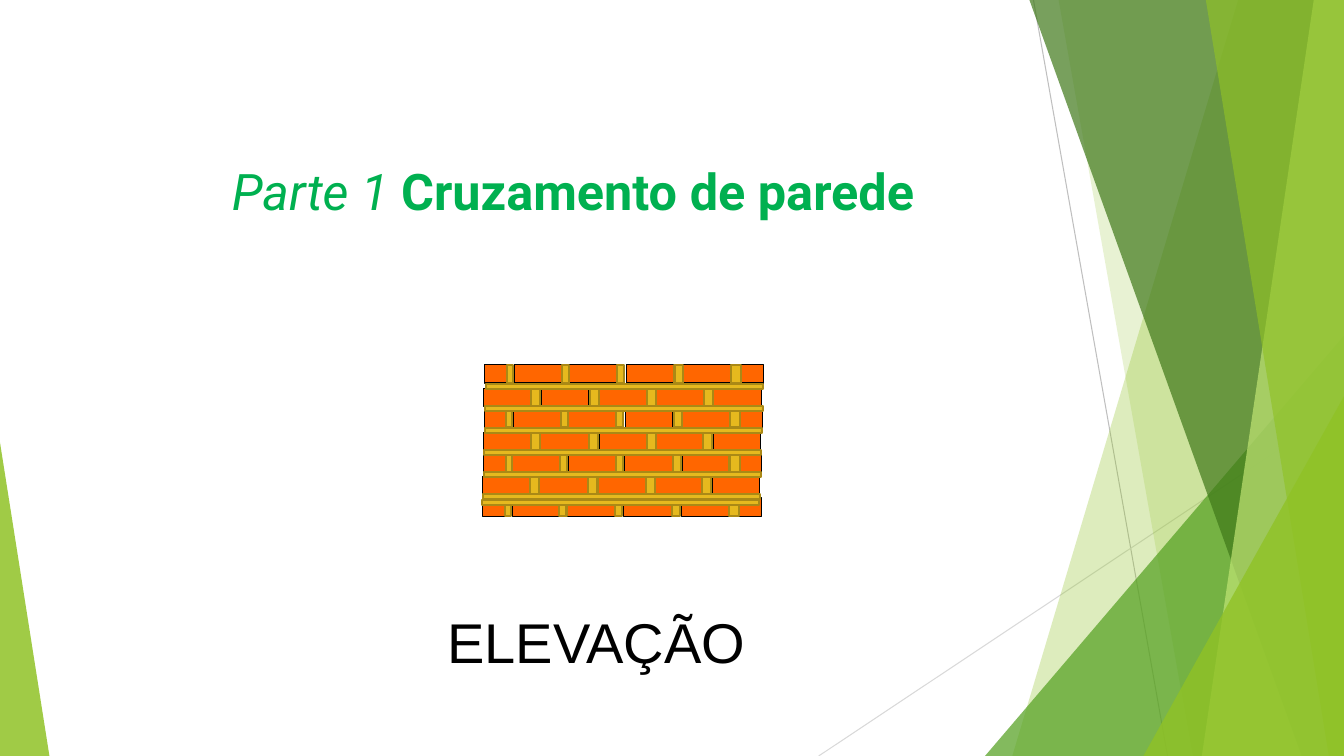
"""Build the wall crossing slide: a brick elevation beside green facets."""
from dataclasses import dataclass
from typing import Optional

from lxml import etree
from pptx import Presentation
from pptx import util as u
from pptx.dml.color import RGBColor
from pptx.enum import shapes, text
from pptx.oxml.ns import qn

HUES = {"brick": "FF6600", "edge": "000000", "joint": "E6B91E", "rim": "AA8916",
        "lime": "90C226", "leaf": "54A021", "moss": "3F7819", "pale": "C0E474",
        "title": "00B050", "ink": "000000", "grey": "BFBFBF", "mist": "D9D9D9"}
WIDE, HIGH = 13.33, 7.5


@dataclass
class Ray:
    """A thin line across the slide."""
    start: tuple[float, float]
    end: tuple[float, float]
    hue: str


@dataclass
class Facet:
    """A full-height band from a slanted left edge to the right side."""
    top: float
    foot: float
    hue: str
    alpha: int


@dataclass
class Wedge:
    """A right triangle standing on the bottom edge."""
    left: float
    top: float
    width: float
    tip: int
    hue: str
    alpha: int


@dataclass
class Block:
    """One brick or joint in a course."""
    left: float
    width: float
    hue: str = "brick"


@dataclass
class Part:
    """One run of text."""
    words: str
    size: int
    font: str
    hue: str
    bold: bool = False
    slant: bool = False


RAYS = [Ray((10.25, 0), (11.58, HIGH), "grey"), Ray((WIDE, 4.03), (8.12, HIGH), "mist")]
PANES = [Facet(12.28, 10.04, "lime", 30), Facet(10.5, 11.83, "lime", 20),
         Wedge(9.77, 3.33, 3.56, 1, "leaf", 72), Facet(10.21, 12.91, "moss", 70),
         Facet(13.03, 11.92, "pale", 70), Facet(11.96, 13.18, "lime", 65),
         Wedge(11.34, 3.93, 1.99, 1, "lime", 80), Wedge(0, 4.39, 0.49, 0, "lime", 85)]

SPAN, THICK, PITCH, DRIFT = 0.47, 0.18, 0.44, 0.007
SPLIT = ([Block(4.81, 0.22)] + [Block(x, SPAN) for x in (5.1, 5.65, 6.21, 6.78)]
         + [Block(7.35, 0.22)]
         + [Block(x, w, "joint") for x, w in ((7.25, 0.1), (6.69, 0.08), (6.12, 0.07),
                                              (5.57, 0.07), (5.03, 0.06))])
WHOLE = ([Block(x, SPAN) for x in (4.8, 5.37, 5.95, 6.51, 7.08)]
         + [Block(x, 0.09, "joint") for x in (5.27, 5.85, 6.42, 6.98)])
BEDS = [(4.82 - 0.006 * i, 3.81 + 0.218 * i) for i in range(6)] + [(4.78, 4.96)]


def tint(hue: str) -> RGBColor:
    """Return the named colour."""
    return RGBColor.from_string(HUES[hue])


def fill(shape, hue: str, rim: Optional[str] = None, weight: float = 0.75,
         alpha: int = 100) -> None:
    """Set fill, outline and transparency."""
    shape.shadow.inherit = False
    shape.fill.solid()
    shape.fill.fore_color.rgb = tint(hue)
    if alpha < 100:
        tone = shape._element.spPr.find(".//" + qn("a:srgbClr"))
        etree.SubElement(tone, qn("a:alpha"), val=str(alpha * 1000))
    if rim:
        shape.line.color.rgb = tint(rim)
        shape.line.width = u.Pt(weight)
    else:
        shape.line.fill.background()


def add_ray(slide, ray: Ray) -> None:
    """Draw a thin line."""
    ends = [u.Inches(v) for v in ray.start + ray.end]
    line = slide.shapes.add_connector(shapes.MSO_CONNECTOR.STRAIGHT, *ends)
    line.line.color.rgb = tint(ray.hue)
    line.line.width = u.Pt(0.75)
    etree.SubElement(line._element.spPr, qn("a:effectLst"))


def add_facet(slide, band: Facet) -> None:
    """Draw a slanted band."""
    spots = [(band.top, 0), (WIDE, 0), (WIDE, HIGH), (band.foot, HIGH)]
    first, *rest = [(u.Inches(x), u.Inches(y)) for x, y in spots]
    pen = slide.shapes.build_freeform(*first)
    pen.add_line_segments(rest, close=True)
    fill(pen.convert_to_shape(), band.hue, alpha=band.alpha)


def add_wedge(slide, wedge: Wedge) -> None:
    """Draw a right triangle."""
    box = (wedge.left, wedge.top, wedge.width, HIGH - wedge.top)
    shape = slide.shapes.add_shape(shapes.MSO_SHAPE.ISOSCELES_TRIANGLE,
                                   *[u.Inches(v) for v in box])
    shape.adjustments[0] = wedge.tip
    fill(shape, wedge.hue, alpha=wedge.alpha)


def add_block(slide, block: Block, top: float, height: float) -> None:
    """Draw a brick or a strip of mortar."""
    box = (block.left, top, block.width, height)
    shape = slide.shapes.add_shape(shapes.MSO_SHAPE.RECTANGLE, *[u.Inches(v) for v in box])
    rim, weight = ("edge", 0.75) if block.hue == "brick" else ("rim", 1.5)
    fill(shape, block.hue, rim, weight)


def add_row(slide, row: list[Block], top: float, shift: float) -> None:
    """Lay one course of bricks."""
    for block in row:
        add_block(slide, Block(block.left - shift, block.width, block.hue), top, THICK)


def add_wall(slide) -> None:
    """Lay the courses from the bottom up, then the mortar beds."""
    for i in reversed(range(4)):
        add_row(slide, SPLIT, 3.62 + PITCH * i, DRIFT * i)
        if i:
            add_row(slide, WHOLE, 3.41 + PITCH * i, DRIFT * (i - 1))
    for left, top in BEDS:
        add_block(slide, Block(left, 2.75, "joint"), top, 0.05)


def write(shape, parts: list[Part], anchor: text.MSO_ANCHOR) -> None:
    """Add the runs to a text frame."""
    frame = shape.text_frame
    frame.word_wrap = True
    frame.auto_size = text.MSO_AUTO_SIZE.NONE
    frame.vertical_anchor = anchor
    para = frame.paragraphs[0]
    para.alignment = text.PP_ALIGN.LEFT
    for part in parts:
        run = para.add_run()
        run.text = part.words
        font = run.font
        font.name, font.size = part.font, u.Pt(part.size)
        font.bold, font.italic = part.bold, part.slant
        font.color.rgb = tint(part.hue)


def main() -> None:
    """Build and save the slide."""
    deck = Presentation()
    deck.slide_width, deck.slide_height = u.Inches(WIDE), u.Inches(HIGH)
    slide = deck.slides.add_slide(deck.slide_layouts.get_by_name("Title Only"))
    for ray in RAYS:
        add_ray(slide, ray)
    for pane in PANES:
        if isinstance(pane, Facet):
            add_facet(slide, pane)
        else:
            add_wedge(slide, pane)
    add_wall(slide)
    title = slide.shapes.title
    title.left, title.top = u.Inches(2.2), u.Inches(1.54)
    title.width, title.height = u.Inches(7.47), u.Inches(0.71)
    write(title, [Part("Parte 1 ", 36, "Roboto", "title", slant=True),
                  Part("Cruzamento de parede", 36, "Roboto", "title", bold=True)],
          text.MSO_ANCHOR.TOP)
    label = slide.shapes.add_textbox(u.Inches(4.34), u.Inches(5.92),
                                     u.Inches(3.72), u.Inches(0.88))
    write(label, [Part("ELEVAÇÃO", 40, "Arial", "ink")], text.MSO_ANCHOR.MIDDLE)
    deck.save("out.pptx")


if __name__ == "__main__":
    main()
